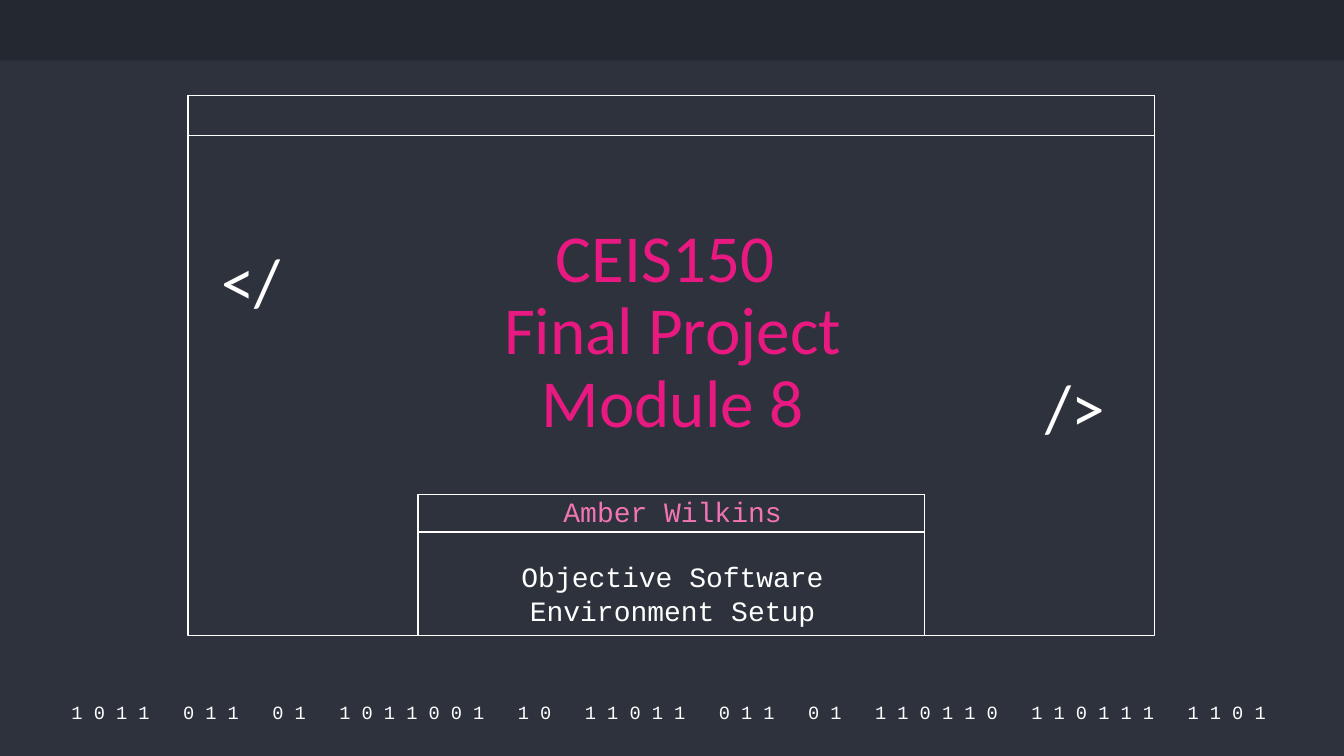
from dataclasses import dataclass

from pptx import Presentation
from pptx.dml.color import RGBColor
from pptx.enum.shapes import MSO_SHAPE
from pptx.enum.text import MSO_ANCHOR, PP_ALIGN
from pptx.util import Inches, Pt

RECT = MSO_SHAPE.RECTANGLE
TOP, MIDDLE, BOTTOM = MSO_ANCHOR.TOP, MSO_ANCHOR.MIDDLE, MSO_ANCHOR.BOTTOM
LEFT, CENTER = PP_ALIGN.LEFT, PP_ALIGN.CENTER

CELL = 0.1  # inches: a grid of 100 columns by 56.25 rows
COLUMNS, ROWS = 100, 56.25
NAVY, DARK, WHITE = "2D323C", "242830", "FFFFFF"
MAGENTA, PINK = "E81981", "F175B3"
SANS, MONO = "Calibri", "Courier New"
BITS = "1011 011 01 1011001 10 11011 011 01 110110 110111 1101"


@dataclass
class Box:
    col: float
    row: float
    cols: float
    rows: float

    def lengths(self):
        return [Inches(n * CELL) for n in (self.col, self.row, self.cols, self.rows)]


@dataclass
class Window:
    frame: Box
    bar_rows: float


@dataclass
class Line:
    text: str
    size: float
    font: str
    color: str
    align: PP_ALIGN = CENTER
    spacing: float = 1.0
    before: float = 0


WINDOWS = [
    Window(Box(14, 7.1, 71.9, 40.2), 3),
    Window(Box(31.1, 36.8, 37.7, 10.5), 2.8),
]
TAGS = [("</", Box(15.5, 17.9, 7.7, 6.6)), ("/>", Box(76.8, 27.3, 7.7, 6.6))]


def rgb(color: str) -> RGBColor:
    return RGBColor.from_string(color)


def add_rect(shapes, box: Box, fill: str, line: str | None = None) -> None:
    sp = shapes.add_shape(RECT, *box.lengths())
    sp.shadow.inherit = False
    sp.fill.solid()
    sp.fill.fore_color.rgb = rgb(fill)
    if line:
        sp.line.color.rgb = rgb(line)
        sp.line.width = Pt(0.75)
    else:
        sp.line.fill.background()


def add_window(s, window: Window) -> None:
    """A frame with a title bar of the same width on its top edge."""
    shapes = s.shapes.add_group_shape().shapes
    f = window.frame
    for box in (f, Box(f.col, f.row, f.cols, window.bar_rows)):
        add_rect(shapes, box, NAVY, WHITE)


def write(sp, lines: list[Line], anchor: MSO_ANCHOR = MIDDLE) -> None:
    tf = sp.text_frame
    tf.word_wrap = True
    tf.vertical_anchor = anchor
    tf.margin_left = tf.margin_right = tf.margin_top = tf.margin_bottom = Inches(0.1)
    for i, line in enumerate(lines):
        p = tf.add_paragraph() if i else tf.paragraphs[0]
        p.text = line.text
        p.alignment = line.align
        p.line_spacing = line.spacing
        p.space_before = Pt(line.before)
        p.font.size = Pt(line.size)
        p.font.name = line.font
        p.font.color.rgb = rgb(line.color)


def add_text(s, box: Box, line: Line) -> None:
    write(s.shapes.add_textbox(*box.lengths()), [line])


def fill_placeholder(s, sp, box: Box, lines: list[Line], anchor: MSO_ANCHOR) -> None:
    """Place, fill and bring to the front."""
    sp.left, sp.top, sp.width, sp.height = box.lengths()
    write(sp, lines, anchor)
    s.shapes._spTree.append(sp._element)


def main() -> None:
    prs = Presentation()
    prs.slide_width, prs.slide_height = Inches(COLUMNS * CELL), Inches(ROWS * CELL)
    s = prs.slides.add_slide(prs.slide_layouts[0])
    s.background.fill.solid()
    s.background.fill.fore_color.rgb = rgb(NAVY)
    title, subtitle = s.placeholders

    add_rect(s.shapes, Box(0, 0, COLUMNS, 4.5), DARK)
    bits = "   ".join(" ".join(word) for word in BITS.split()) + " "
    add_text(s, Box(3.8, 52, 92.7, 2), Line(bits, 10, MONO, WHITE))
    for window in WINDOWS:
        add_window(s, window)
    for tag, box in TAGS:
        add_text(s, box, Line(tag, 36, SANS, WHITE, LEFT, 0.9))

    heading = Line("CEIS150 \vFinal Project\vModule 8", 36, SANS, MAGENTA, spacing=0.9)
    fill_placeholder(s, title, Box(22.6, 14.1, 54.9, 19.8), [heading], BOTTOM)
    details = [
        Line("Amber Wilkins", 15, MONO, PINK),
        Line("Objective Software Environment Setup", 15, MONO, WHITE, before=17),
    ]
    fill_placeholder(s, subtitle, Box(33.4, 35.8, 33.3, 9.6), details, TOP)
    prs.save("out.pptx")


if __name__ == "__main__":
    main()
